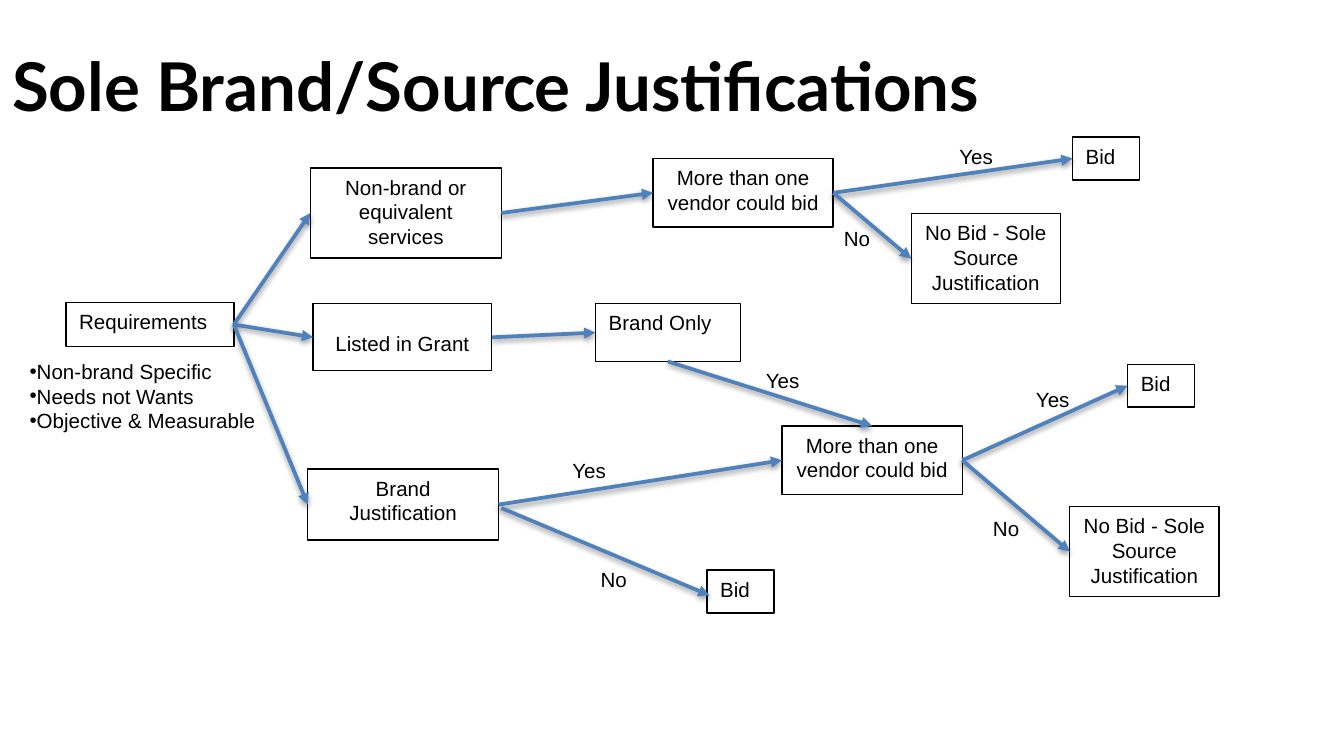
from lxml import etree
from pptx import Presentation
from pptx import util as u
from pptx.dml.color import RGBColor
from pptx.enum import shapes, text
from pptx.oxml import parse_xml
from pptx.oxml.ns import nsdecls, qn

HUES = {"ink": "000000", "paper": "FFFFFF", "arrow": "4F81BD"}
CELL = 0.1  # grid of 100 columns, lengths below are in cells
TOP, LEFT, BOTTOM, RIGHT = range(4)

# Box sizes in columns and rows
WIDE, ASK, SOLE, BID = (14.2, 6.7), (13.4, 5.1), (11.1, 6.7), (5, 3.2)
VENDOR = "More than one vendor could bid"
NOBID = "No Bid - Sole Source Justification"

# Key: words, column, row, size, centred
BOXES = {
    "need": ("Requirements", 4.9, 22.5, (12.5, 3.3), False),
    "open": ("Non-brand or\nequivalent services", 23.1, 12.5, WIDE, True),
    "grant": ("Listed in Grant", 23.3, 22.6, (13.3, 5), True),
    "brand": ("Brand Justification", 22.9, 34.9, (14.2, 5.3), True),
    "ask1": (VENDOR, 48.6, 11.8, ASK, True),
    "bid1": ("Bid", 79.8, 10.2, BID, False),
    "sole1": (NOBID, 67.8, 15.9, SOLE, True),
    "ask2": (VENDOR, 58.2, 31.7, ASK, True),
    "bid2": ("Bid", 83.9, 27.1, BID, False),
    "sole2": (NOBID, 79.6, 37.7, SOLE, True),
    "bid3": ("Bid", 52.6, 42.4, BID, False),
    "only": ("Brand Only", 44.3, 22.6, (10.8, 4.3), False),
}
LABELS = [
    ("Yes", 70.4, 10.2), ("Yes", 56, 26.9), ("Yes", 76.1, 28.3),
    ("Yes", 41.6, 33.6), ("No", 43.7, 41.7), ("No", 72.9, 37.9),
    ("No", 61.8, 16.3),
]
LINKS = [
    ("open", "ask1"), ("ask1", "bid1"), ("ask1", "sole1"),
    ("need", "open"), ("need", "grant"), ("need", "brand"),
    ("grant", "only"), ("brand", "ask2"), ("ask2", "bid2"),
    ("ask2", "sole2"),
]
POINTS = ["Non-brand Specific", "Needs not Wants", "Objective & Measurable"]


def cells(*nums):
    return [u.Inches(round(n * CELL, 2)) for n in nums]


def hue(name):
    return RGBColor.from_string(HUES[name])


def style(par, size=11, face="Arial"):
    par.font.size = u.Pt(size)
    par.font.name = face
    par.font.color.rgb = hue("ink")


def write(frame, words, align=text.PP_ALIGN.LEFT):
    frame.word_wrap = True
    frame.auto_size = text.MSO_AUTO_SIZE.NONE
    frame.vertical_anchor = text.MSO_ANCHOR.TOP
    frame.text = words
    for par in frame.paragraphs:
        par.alignment = align
        style(par)


def place(shape, *spot):
    shape.left, shape.top, shape.width, shape.height = cells(*spot)


def head(slide):
    title = slide.shapes.title
    place(title, -0.1, 1.6, 90, 9.4)
    frame = title.text_frame
    write(frame, "Sole Brand/Source Justifications")
    frame.vertical_anchor = text.MSO_ANCHOR.MIDDLE
    style(frame.paragraphs[0], 36, "Lato")
    frame.paragraphs[0].font.bold = True


def points(slide):
    body = slide.placeholders[1]
    place(body, 1.2, 26.2, 23.9, 7.9)
    write(body.text_frame, "\n".join(POINTS))
    for par in body.text_frame.paragraphs:
        par.space_before = u.Pt(0)
        props = par._p.get_or_add_pPr()
        props.set("marL", "0")
        props.set("indent", "0")


def box(slide, words, col, row, size, mid):
    shape = slide.shapes.add_shape(
        shapes.MSO_SHAPE.RECTANGLE, *cells(col, row, *size))
    shape.shadow.inherit = False
    shape.fill.solid()
    shape.fill.fore_color.rgb = hue("paper")
    shape.line.color.rgb = hue("ink")
    shape.line.width = u.Pt(0.75)
    frame = shape.text_frame
    write(frame, words, text.PP_ALIGN.CENTER if mid else text.PP_ALIGN.LEFT)
    if mid:
        frame.margin_left = frame.margin_right = u.Inches(0.09)
    return shape


def label(slide, words, col, row):
    area = slide.shapes.add_textbox(*cells(col, row, 5.4, 3.5))
    write(area.text_frame, words)


def arrow(slide, start=(0, 0), end=(0, 0)):
    line = slide.shapes.add_connector(
        shapes.MSO_CONNECTOR.STRAIGHT, *cells(*start, *end))
    line.line.color.rgb = hue("arrow")
    line.line.width = u.Pt(2)
    tip = etree.SubElement(line.line._get_or_add_ln(), qn("a:tailEnd"))
    tip.set("type", "triangle")
    # Soft shadow straight below the line
    line._element.spPr.append(parse_xml(
        f'<a:effectLst {nsdecls("a")}><a:outerShdw blurRad="{u.Pt(3.1)}" '
        f'dist="{u.Pt(1.6)}" dir="5400000" rotWithShape="0">'
        f'<a:srgbClr val="{HUES["ink"]}"><a:alpha val="38000"/></a:srgbClr>'
        '</a:outerShdw></a:effectLst>'))
    return line


def link(slide, first, last, out=RIGHT, into=LEFT):
    line = arrow(slide)
    line.begin_connect(first, out)
    line.end_connect(last, into)


def main():
    # Widescreen slide, 16 by 9
    deck = Presentation()
    deck.slide_width = u.Inches(10)
    deck.slide_height = deck.slide_width * 9 // 16
    slide = deck.slides.add_slide(deck.slide_layouts[1])

    # Title and list
    head(slide)
    points(slide)

    # Boxes and answers
    nodes = {key: box(slide, *item) for key, item in BOXES.items()}
    nodes["grant"].text_frame.margin_top = u.Inches(0.2)
    for item in LABELS:
        label(slide, *item)

    # Arrows
    for first, last in LINKS:
        link(slide, nodes[first], nodes[last])
    link(slide, nodes["only"], nodes["ask2"], BOTTOM, TOP)
    arrow(slide, (37.3, 37.8), (52.8, 44.3))

    deck.save("out.pptx")


if __name__ == "__main__":
    main()
